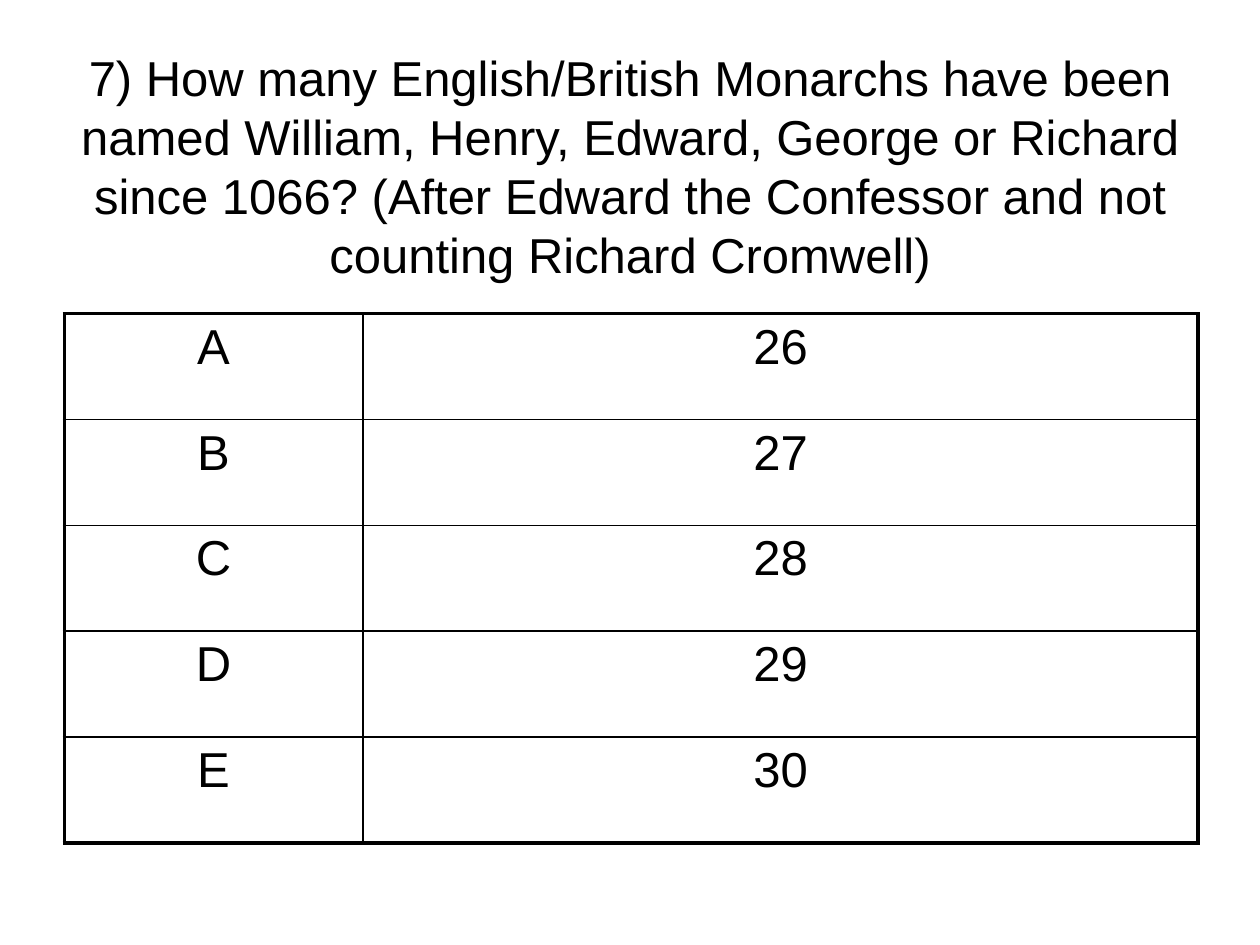
"""Build a quiz slide with a question and a bordered table of lettered answers."""
from lxml import etree
from pptx import Presentation
from pptx.dml.color import RGBColor
from pptx.enum.text import MSO_ANCHOR, PP_ALIGN
from pptx.oxml.ns import qn
from pptx.util import Inches, Pt

BLACK = RGBColor(0, 0, 0)
CENTER = PP_ALIGN.CENTER
MIDDLE = MSO_ANCHOR.MIDDLE
THIN, THICK = Pt(1), Pt(2.25)

QUESTION = (
    "7) How many English/British Monarchs have been named William, Henry, "
    "Edward, George or Richard since 1066? (After Edward the Confessor and "
    "not counting Richard Cromwell)"
)
ANSWERS = [("A", "26"), ("B", "27"), ("C", "28"), ("D", "29"), ("E", "30")]


def write_text(frame, text, *, font, size, color, align=CENTER):
    paragraph = frame.paragraphs[0]
    paragraph.alignment = align
    run = paragraph.add_run()
    run.text = text
    run.font.name = font
    run.font.size = Pt(size)
    run.font.color.rgb = color


def set_borders(cell, widths):
    properties = cell._tc.get_or_add_tcPr()
    for position, (side, width) in enumerate(widths.items()):
        line = etree.Element(qn(f"a:ln{side}"), w=str(int(width)))
        fill = etree.SubElement(line, qn("a:solidFill"))
        etree.SubElement(fill, qn("a:srgbClr"), val=str(BLACK))
        properties.insert(position, line)


class QuizSlide:
    def __init__(self, slide, font="Arial", size=28, color=BLACK):
        self.slide = slide
        self.style = {"font": font, "size": size, "color": color}

    def add_question(self, text, left, top, width, height):
        question = self.slide.shapes.add_textbox(
            Inches(left), Inches(top), Inches(width), Inches(height)
        )
        frame = question.text_frame
        frame.word_wrap = True
        frame.vertical_anchor = MIDDLE
        write_text(frame, text, **self.style)

    def add_answers(self, answers, left, top, column_widths, row_height):
        last_row, last_column = len(answers) - 1, len(column_widths) - 1
        table = self.slide.shapes.add_table(
            len(answers), len(column_widths), Inches(left), Inches(top),
            Inches(sum(column_widths)), Inches(row_height * len(answers)),
        ).table
        table.first_row = table.horz_banding = False
        for column, width in zip(table.columns, column_widths):
            column.width = Inches(width)
        for r, answer in enumerate(answers):
            table.rows[r].height = Inches(row_height)
            for c, text in enumerate(answer):
                cell = table.cell(r, c)
                cell.fill.background()
                write_text(cell.text_frame, text, **self.style)
                set_borders(cell, {
                    "L": THICK if c == 0 else THIN,
                    "R": THICK if c == last_column else THIN,
                    "T": THICK if r == 0 else THIN,
                    "B": THICK if r == last_row else THIN,
                })


def main():
    deck = Presentation()
    deck.slide_width, deck.slide_height = Inches(10), Inches(7.5)
    quiz = QuizSlide(deck.slides.add_slide(deck.slide_layouts[6]))
    quiz.add_question(QUESTION, 0.5, 0.3, 9, 2.03)
    quiz.add_answers(ANSWERS, 0.51, 2.49, (2.37, 6.63), 0.84)
    deck.save("out.pptx")


if __name__ == "__main__":
    main()
